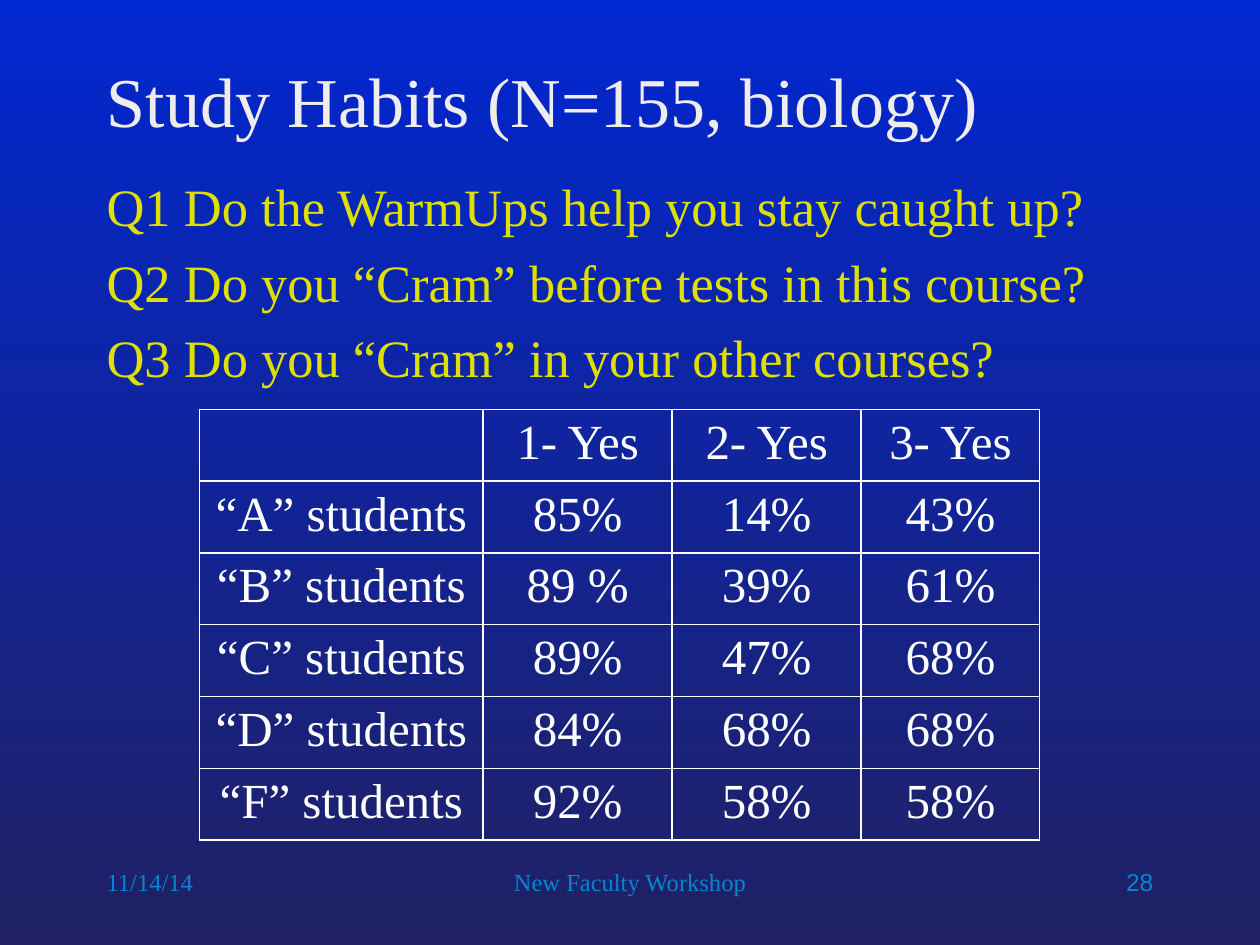
import pptx
import pptx.util
import pptx.dml.color
import pptx.enum.text
import pptx.oxml.ns
import lxml.etree

Cm, Pt = pptx.util.Cm, pptx.util.Pt
RGBColor = pptx.dml.color.RGBColor
ALIGN = pptx.enum.text.PP_ALIGN
ANCHOR = pptx.enum.text.MSO_ANCHOR
qn = pptx.oxml.ns.qn

SKY = RGBColor(0x01, 0x27, 0xD0)
NIGHT = RGBColor(0x20, 0x21, 0x63)
IVORY = RGBColor(0xEE, 0xED, 0xEB)
YELLOW = RGBColor(0xE0, 0xDF, 0x02)
WHITE = RGBColor(0xFF, 0xFF, 0xFF)
FOOTER = RGBColor(0x03, 0x86, 0xD3)
SERIF, SANS = "Times New Roman", "Arial"

QUESTIONS = [
    "Q1 Do the WarmUps help you stay caught up?",
    "Q2 Do you “Cram” before tests in this course?",
    "Q3 Do you “Cram” in your other courses?",
]
ANSWERS = [
    ["", "1- Yes", "2- Yes", "3- Yes"],
    ["“A” students", "85%", "14%", "43%"],
    ["“B” students", "89 %", "39%", "61%"],
    ["“C” students", "89%", "47%", "68%"],
    ["“D” students", "84%", "68%", "68%"],
    ["“F” students", "92%", "58%", "58%"],
]


def add_run(p, text, size, color, font=SERIF, align=ALIGN.LEFT):
    p.alignment = align
    r = p.add_run()
    r.text = text
    r.font.size = Pt(size)
    r.font.name = font
    r.font.color.rgb = color


def set_background(s):
    fill = s.background.fill
    fill.gradient()
    fill.gradient_angle = 270
    for stop, color, position in zip(fill.gradient_stops, (SKY, NIGHT), (0, 1)):
        stop.color.rgb = color
        stop.position = position


def set_title(s, text):
    sp = s.shapes.title
    sp.left, sp.top, sp.width, sp.height = Cm(1.9), Cm(1.06), Cm(21.6), Cm(1.9)
    tf = sp.text_frame
    tf.auto_size = pptx.enum.text.MSO_AUTO_SIZE.NONE
    tf.vertical_anchor = ANCHOR.MIDDLE
    add_run(tf.paragraphs[0], text, 40, IVORY)


def add_box(s, left, top, width, height):
    tf = s.shapes.add_textbox(Cm(left), Cm(top), Cm(width), Cm(height)).text_frame
    tf.word_wrap = True
    return tf


def add_questions(s):
    tf = add_box(s, 1.9, 3.39, 21.6, 4.66)
    for i, question in enumerate(QUESTIONS):
        p = tf.add_paragraph() if i else tf.paragraphs[0]
        p.space_before = Pt(7)
        # Hanging indent
        pPr = p._p.get_or_add_pPr()
        pPr.set("marL", str(Cm(0.95)))
        pPr.set("indent", str(-Cm(0.95)))
        add_run(p, question, 30, YELLOW)


def add_footer(s, left, width, text, align, font=SERIF):
    tf = add_box(s, left, 17.36, width, 0.85)
    add_run(tf.paragraphs[0], text, 14, FOOTER, font, align)


def set_borders(cell):
    tcPr = cell._tc.get_or_add_tcPr()
    for side in ("lnL", "lnR", "lnT", "lnB"):
        ln = lxml.etree.SubElement(tcPr, qn("a:" + side), w=str(Pt(1)))
        fill = lxml.etree.SubElement(ln, qn("a:solidFill"))
        lxml.etree.SubElement(fill, qn("a:srgbClr"), val=str(WHITE))


def add_answers(s):
    frame = s.shapes.add_table(len(ANSWERS), len(ANSWERS[0]),
                               Cm(4.02), Cm(8.25), Cm(16.94), Cm(8.69))
    table = frame.table
    table.first_row = table.horz_banding = False
    for column, width in zip(table.columns, (5.72, 3.81, 3.81, 3.6)):
        column.width = Cm(width)
    for row, values in zip(table.rows, ANSWERS):
        for cell, value in zip(row.cells, values):
            set_borders(cell)
            cell.fill.background()
            if value:
                add_run(cell.text_frame.paragraphs[0], value, 28, WHITE,
                        align=ALIGN.CENTER)


def main():
    prs = pptx.Presentation()
    prs.slide_width, prs.slide_height = Cm(25.4), Cm(19.05)
    s = prs.slides.add_slide(prs.slide_layouts[5])
    set_background(s)
    set_title(s, "Study Habits (N=155, biology)")
    add_questions(s)
    add_answers(s)
    # Footer line
    add_footer(s, 1.9, 5.29, "11/14/14", ALIGN.LEFT)
    add_footer(s, 8.68, 8.04, "New Faculty Workshop", ALIGN.CENTER)
    add_footer(s, 22.02, 1.48, "28", ALIGN.RIGHT, SANS)
    prs.save("out.pptx")


if __name__ == "__main__":
    main()
